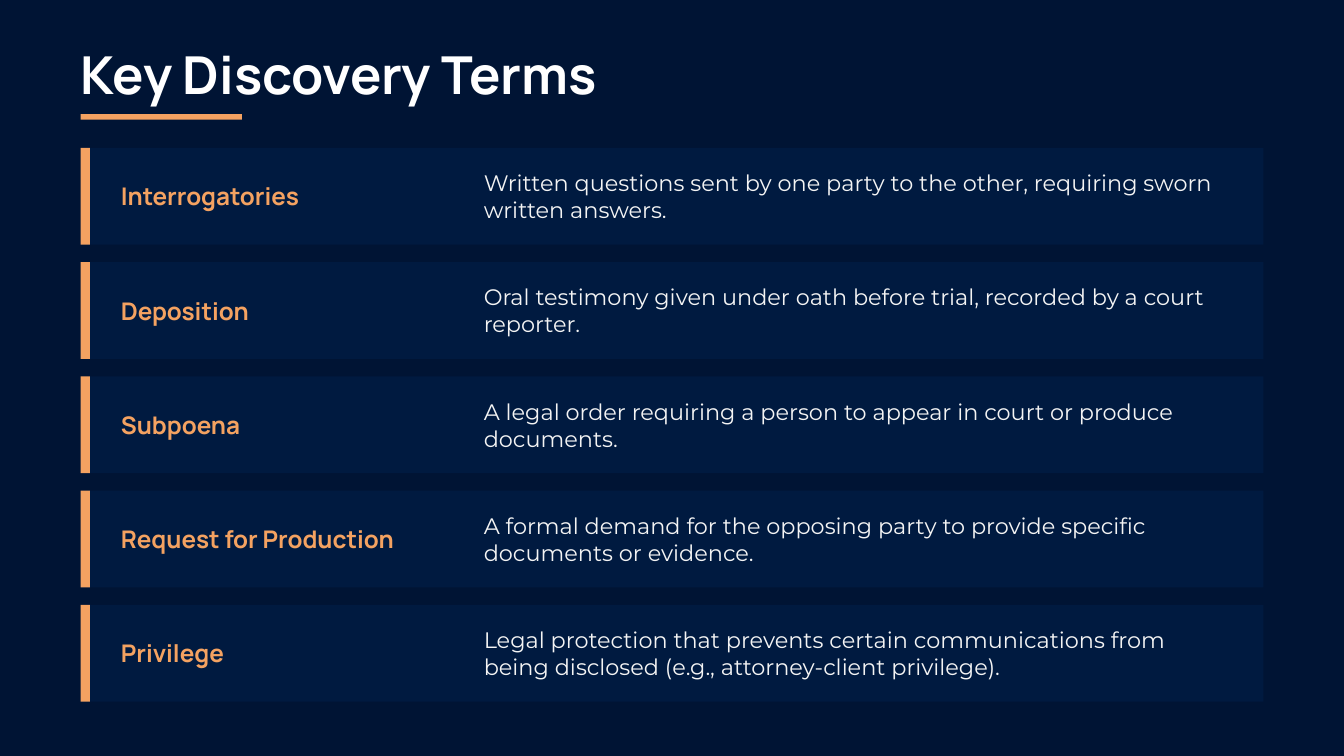
"""Build the Key Discovery Terms slide."""
import pptx
import pptx.dml.color
import pptx.enum.shapes
import pptx.enum.text
import pptx.util

Inches = pptx.util.Inches
Color = pptx.dml.color.RGBColor.from_string

THEME = {
    "back": "001434",
    "card": "001A40",
    "accent": "F4A261",
    "title": {"size": 28, "font": "Manrope", "color": "FFFFFF", "bold": True},
    "term": {"size": 13, "font": "Manrope", "color": "F4A261", "bold": True},
    "body": {"size": 12, "font": "Montserrat", "color": "F4F4F4", "bold": False},
}

TERMS = [
    ("Interrogatories",
     "Written questions sent by one party to the other, requiring sworn written answers."),
    ("Deposition",
     "Oral testimony given under oath before trial, recorded by a court reporter."),
    ("Subpoena",
     "A legal order requiring a person to appear in court or produce documents."),
    ("Request for Production",
     "A formal demand for the opposing party to provide specific documents or evidence."),
    ("Privilege",
     "Legal protection that prevents certain communications from being disclosed "
     "(e.g., attorney-client privilege)."),
]


def add_bar(slide, left, top, width, height, color):
    bar = slide.shapes.add_shape(
        pptx.enum.shapes.MSO_SHAPE.RECTANGLE,
        Inches(left), Inches(top), Inches(width), Inches(height))
    bar.shadow.inherit = False
    bar.fill.solid()
    bar.fill.fore_color.rgb = Color(color)
    bar.line.fill.background()


def set_text(shape, text, style):
    frame = shape.text_frame
    frame.word_wrap = True
    frame.auto_size = pptx.enum.text.MSO_AUTO_SIZE.NONE
    frame.vertical_anchor = pptx.enum.text.MSO_ANCHOR.MIDDLE
    frame.margin_left = frame.margin_right = 0
    frame.margin_top = frame.margin_bottom = 0
    para = frame.paragraphs[0]
    para.alignment = pptx.enum.text.PP_ALIGN.LEFT
    run = para.add_run()
    run.text = text
    run.font.size = pptx.util.Pt(style["size"])
    run.font.name = style["font"]
    run.font.bold = style["bold"]
    run.font.color.rgb = Color(style["color"])


deck = pptx.Presentation()
deck.slide_width = Inches(10)
deck.slide_height = Inches(10 * 9 / 16)
slide = deck.slides.add_slide(deck.slide_layouts[5])
slide.background.fill.solid()
slide.background.fill.fore_color.rgb = Color(THEME["back"])

title = slide.shapes.title
title.left, title.top = Inches(0.6), Inches(0.3)
title.width, title.height = Inches(8), Inches(0.5)
set_text(title, "Key Discovery Terms", THEME["title"])
add_bar(slide, 0.6, 0.85, 1.2, 0.04, THEME["accent"])

high, step = 0.72, 0.85
for row, (term, body) in enumerate(TERMS):
    top = 1.1 + row * step
    add_bar(slide, 0.6, top, 8.8, high, THEME["card"])
    add_bar(slide, 0.6, top, 0.07, high, THEME["accent"])
    for left, width, text, kind in ((0.9, 2.6, term, "term"), (3.6, 5.6, body, "body")):
        box = slide.shapes.add_textbox(
            Inches(left), Inches(top), Inches(width), Inches(high))
        set_text(box, text, THEME[kind])

deck.save("out.pptx")
